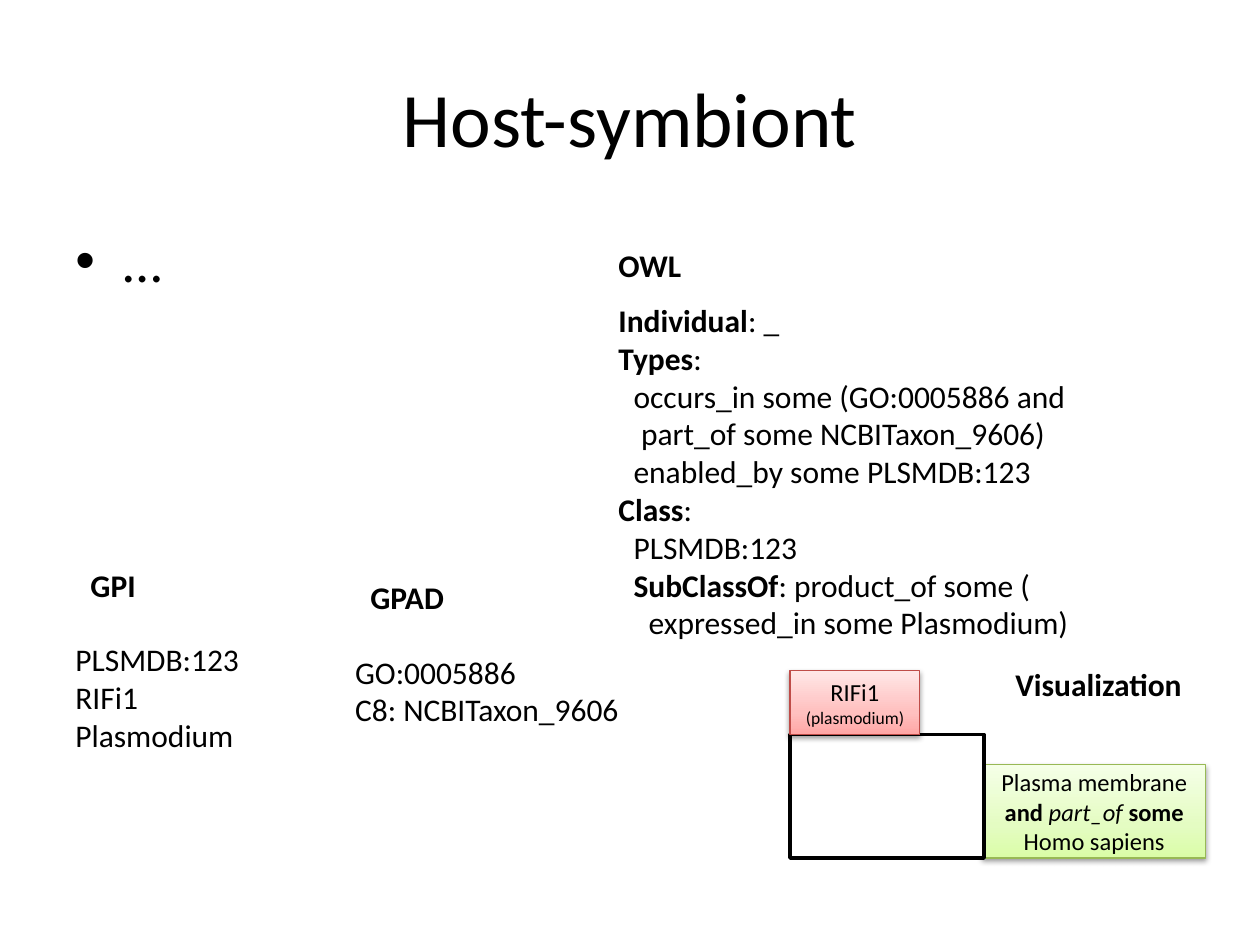
from dataclasses import dataclass

from lxml.etree import SubElement
from pptx import Presentation
from pptx.dml.color import RGBColor
from pptx.enum.shapes import MSO_SHAPE
from pptx.enum.text import MSO_ANCHOR, MSO_AUTO_SIZE, PP_ALIGN
from pptx.oxml.ns import qn
from pptx.util import Inches, Pt


@dataclass(frozen=True)
class Theme:
    font: str = "Calibri"
    ink: str = "000000"
    paper: str = "FFFFFF"
    red_line: str = "BF4C48"
    red_stops: tuple = ((0, "FFA6A5"), (35, "FFC0BF"), (100, "FFE7E7"))
    green_line: str = "98B955"
    green_stops: tuple = ((0, "DAFDA7"), (35, "E4FCC2"), (100, "F5FFE7"))
    title: int = 44
    bullet: int = 32
    body: int = 18
    label: int = 14
    small: int = 10


class SlideBuilder:
    COLUMNS, ROWS = 100, 75
    SPACE_INDENT = Inches(0.06)

    def __init__(self, theme):
        self.theme = theme
        self.deck = Presentation()
        self.deck.slide_width, self.deck.slide_height = Inches(10), Inches(7.5)
        self.slide = self.deck.slides.add_slide(self.deck.slide_layouts[5])

    def area(self, column, row, columns, rows):
        across = self.deck.slide_width / self.COLUMNS
        down = self.deck.slide_height / self.ROWS
        return [round(length) for length in (column * across, row * down, columns * across, rows * down)]

    def set_line(self, paragraph, parts, size, align=PP_ALIGN.LEFT):
        paragraph.alignment = align
        paragraph.text = parts[0][0]
        for wording, _ in parts[1:]:
            paragraph.add_run().text = wording
        for run, (_, style) in zip(paragraph.runs, parts):
            run.font.name = self.theme.font
            run.font.size = Pt(size)
            run.font.bold = style == "bold"
            run.font.italic = style == "italic"
            run.font.color.rgb = RGBColor.from_string(self.theme.ink)

    def title(self, wording, area):
        heading = self.slide.shapes.title
        heading.left, heading.top, heading.width, heading.height = self.area(*area)
        heading.text_frame.vertical_anchor = MSO_ANCHOR.MIDDLE
        self.set_line(heading.text_frame.paragraphs[0], [(wording, "")], self.theme.title, PP_ALIGN.CENTER)

    def bullet(self, wording, area):
        frame = self.slide.shapes.add_textbox(*self.area(*area)).text_frame
        frame.word_wrap = True
        point = frame.paragraphs[0]
        self.set_line(point, [(wording, "")], self.theme.bullet)
        point.space_before = Pt(self.theme.bullet * 0.2)
        properties = point._p.get_or_add_pPr()
        properties.set("marL", str(Inches(0.38)))
        properties.set("indent", str(-Inches(0.38)))
        SubElement(properties, qn("a:buFont")).set("typeface", "Arial")
        SubElement(properties, qn("a:buChar")).set("char", "•")

    def text(self, lines, area):
        frame = self.slide.shapes.add_textbox(*self.area(*area)).text_frame
        frame.word_wrap = False
        frame.auto_size = MSO_AUTO_SIZE.SHAPE_TO_FIT_TEXT
        for number, (depth, *parts) in enumerate(lines):
            paragraph = frame.add_paragraph() if number else frame.paragraphs[0]
            self.set_line(paragraph, parts, self.theme.body)
            if depth:
                paragraph._p.get_or_add_pPr().set("marL", str(depth * self.SPACE_INDENT))

    def heading(self, wording, area):
        self.text([(0, (wording, "bold"))], area)

    def plain(self, lines, area):
        self.text([(0, (line, "")) for line in lines], area)

    def box(self, area, line, width):
        box = self.slide.shapes.add_shape(MSO_SHAPE.RECTANGLE, *self.area(*area))
        box.shadow.inherit = False
        box.fill.solid()
        box.fill.fore_color.rgb = RGBColor.from_string(self.theme.paper)
        box.line.color.rgb = RGBColor.from_string(line)
        box.line.width = Pt(width)
        return box

    def gradient_box(self, paragraphs, area, line, stops):
        box = self.box(area, line, 0.75)
        box.fill.gradient()
        box.fill.gradient_angle = 90
        properties = box._element.spPr
        stop_list = properties.find(".//" + qn("a:gsLst"))
        stop_list.clear()
        for position, color in stops:
            stop = SubElement(stop_list, qn("a:gs"), pos=str(position * 1000))
            SubElement(stop, qn("a:srgbClr"), val=color)
        shadow = SubElement(
            properties.find(qn("a:effectLst")), qn("a:outerShdw"),
            blurRad=str(Pt(3.1)), dist=str(Pt(1.6)), dir="5400000", rotWithShape="0",
        )
        shade = SubElement(shadow, qn("a:srgbClr"), val=self.theme.ink)
        SubElement(shade, qn("a:alpha"), val="38000")
        frame = box.text_frame
        frame.word_wrap = True
        frame.vertical_anchor = MSO_ANCHOR.MIDDLE
        for number, (size, *parts) in enumerate(paragraphs):
            paragraph = frame.add_paragraph() if number else frame.paragraphs[0]
            self.set_line(paragraph, parts, size, PP_ALIGN.CENTER)


def main():
    theme = Theme()
    page = SlideBuilder(theme)
    page.title("Host-symbiont", (5, 3, 90, 12.5))
    page.bullet("…", (5, 17.5, 56.7, 25.3))

    owl_axioms = [
        (0, ("Individual", "bold"), (": _", "")),
        (0, ("Types", "bold"), (":", "")),
        (2, ("occurs_in some (GO:0005886 and", "")),
        (3, ("part_of some NCBITaxon_9606)", "")),
        (2, ("enabled_by some PLSMDB:123", "")),
        (0, ("Class", "bold"), (":", "")),
        (2, ("PLSMDB:123", "")),
        (2, ("SubClassOf", "bold"), (": product_of some (", "")),
        (4, ("expressed_in some Plasmodium)", "")),
    ]
    page.text(owl_axioms, (48.1, 23.4, 37.8, 28.3))
    page.heading("OWL", (48.1, 19, 7.1, 4))
    page.heading("GPAD", (28.4, 45.4, 8.1, 4))
    page.heading("Visualization", (79.6, 52.3, 15.4, 4))
    page.plain(["GO:0005886", "C8: NCBITaxon_9606"], (27.2, 51.3, 23.4, 10.1))

    location = (
        theme.label, ("Plasma membrane ", ""), ("and ", "bold"),
        ("part_of ", "italic"), ("some", "bold"), (" Homo sapiens", ""),
    )
    page.gradient_box([location], (78, 60.7, 17.7, 7.4), theme.green_line, theme.green_stops)
    page.box((62.7, 58.3, 15.4, 9.8), theme.ink, 2)
    gene_product = [(theme.label, ("RIFi1", "")), (theme.small, ("(plasmodium)", ""))]
    page.gradient_box(gene_product, (62.7, 53.2, 10.3, 5.1), theme.red_line, theme.red_stops)

    page.heading("GPI", (6.2, 44.4, 5.6, 4))
    page.plain(["PLSMDB:123", "RIFi1", "Plasmodium"], (5, 50.3, 15.1, 13.1))
    page.deck.save("out.pptx")


if __name__ == "__main__":
    main()
